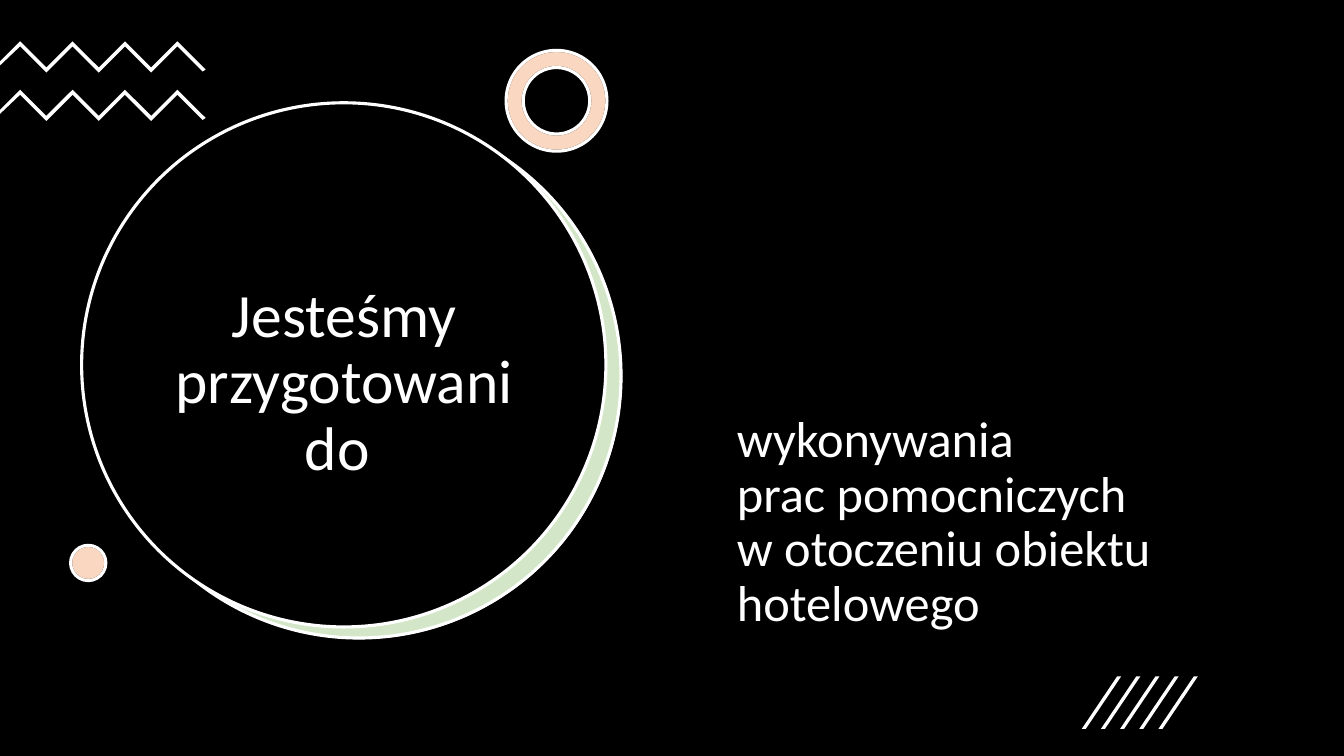
import pptx
import pptx.util
import pptx.dml.color
import pptx.enum.shapes
import pptx.enum.text
import pptx.oxml.ns
from lxml import etree

Inches = pptx.util.Inches
Pt = pptx.util.Pt
RGBColor = pptx.dml.color.RGBColor
MSO_SHAPE = pptx.enum.shapes.MSO_SHAPE

BLACK = RGBColor(0x00, 0x00, 0x00)
WHITE = RGBColor(0xFF, 0xFF, 0xFF)
GREEN = RGBColor(0x70, 0xAD, 0x47)
ORANGE = RGBColor(0xED, 0x7D, 0x31)
TINT_OPACITY = 30
NO_BREAK_SPACE = chr(160)

prs = pptx.Presentation()
prs.slide_width = Inches(13.33)
prs.slide_height = Inches(7.5)
slide = prs.slides.add_slide(prs.slide_layouts[5])

backdrop = slide.shapes.add_shape(
    MSO_SHAPE.RECTANGLE, 0, 0, prs.slide_width, prs.slide_height)
backdrop.shadow.inherit = False
backdrop.fill.solid()
backdrop.fill.fore_color.rgb = BLACK
backdrop.line.fill.background()


def add_round(kind, left, top, size, fill, outline, opacity=100):
    """Add a circle or ring; an outline of None leaves it without a line."""
    circle = slide.shapes.add_shape(
        kind, Inches(left), Inches(top), Inches(size), Inches(size))
    circle.shadow.inherit = False
    circle.fill.solid()
    circle.fill.fore_color.rgb = fill
    if opacity < 100:
        color = circle.element.spPr.find(
            pptx.oxml.ns.qn("a:solidFill") + "/" + pptx.oxml.ns.qn("a:srgbClr"))
        alpha = etree.SubElement(color, pptx.oxml.ns.qn("a:alpha"))
        alpha.set("val", str(opacity * 1000))
    if outline is None:
        circle.line.fill.background()
    else:
        circle.line.color.rgb = outline
        circle.line.width = Pt(2.25)
    if kind == MSO_SHAPE.DONUT:
        circle.adjustments[0] = 0.17


def add_white_polygon(points):
    corners = [(Inches(x), Inches(y)) for x, y in points]
    builder = slide.shapes.build_freeform(*corners[0])
    builder.add_line_segments(corners[1:], close=True)
    polygon = builder.convert_to_shape()
    polygon.shadow.inherit = False
    polygon.fill.solid()
    polygon.fill.fore_color.rgb = WHITE
    polygon.line.fill.background()


# Large title circle with its green crescent
add_round(MSO_SHAPE.OVAL, 0.97, 1.14, 5.2, WHITE, None)
add_round(MSO_SHAPE.OVAL, 0.96, 1.13, 5.2, GREEN, WHITE, TINT_OPACITY)
add_round(MSO_SHAPE.OVAL, 0.81, 1.02, 5.2, BLACK, WHITE)

# Zigzag bands running off the left edge
for top in (0.41, 0.89):
    turns = [(0.2 + 0.26 * i, top + 0.26 * (i % 2)) for i in range(7)]
    lower_turns = [(x, y + 0.05) for x, y in reversed(turns)]
    add_white_polygon(
        [(0, top + 0.2)] + turns
        + [(2.04, top + 0.28), (2.01, top + 0.3)]
        + lower_turns + [(0, top + 0.24)])

# Orange ring and dot, each tinted over a white base
for kind, left, top, size in ((MSO_SHAPE.DONUT, 5.02, 0.5, 1),
                              (MSO_SHAPE.OVAL, 0.7, 5.41, 0.35)):
    add_round(kind, left, top, size, WHITE, BLACK)
    add_round(kind, left, top, size, ORANGE, WHITE, TINT_OPACITY)

# Slanted strokes at the bottom right
for i in range(5):
    left = 10.73 + 0.19 * i
    add_white_polygon([(left + 0.04, 7.23), (left, 7.23),
                       (left + 0.35, 6.71), (left + 0.39, 6.71)])

# Title goes in front of the circles
title = slide.shapes.title
title.element.getparent().append(title.element)
title.left, title.top = Inches(1.21), Inches(2.05)
title.width, title.height = Inches(4.41), Inches(3.52)
title.text_frame.text = "Jesteśmy przygotowani do" + NO_BREAK_SPACE

task = slide.shapes.add_textbox(
    Inches(7.21), Inches(4.06), Inches(5.9), Inches(2.3))
task.text_frame.paragraphs[0].text = (
    f"wykonywania prac{NO_BREAK_SPACE}pomocniczych "
    "\vw otoczeniu obiektu hotelowego")

for box, size, align, anchor in (
        (title, 44, pptx.enum.text.PP_ALIGN.CENTER,
         pptx.enum.text.MSO_ANCHOR.MIDDLE),
        (task, 36, pptx.enum.text.PP_ALIGN.LEFT,
         pptx.enum.text.MSO_ANCHOR.TOP)):
    frame = box.text_frame
    frame.word_wrap = True
    frame.auto_size = pptx.enum.text.MSO_AUTO_SIZE.NONE
    frame.vertical_anchor = anchor
    paragraph = frame.paragraphs[0]
    paragraph.alignment = align
    paragraph.line_spacing = 0.9
    for run in paragraph.runs:
        run.font.name = "Calibri"
        run.font.size = Pt(size)
        run.font.color.rgb = WHITE

prs.save("out.pptx")
